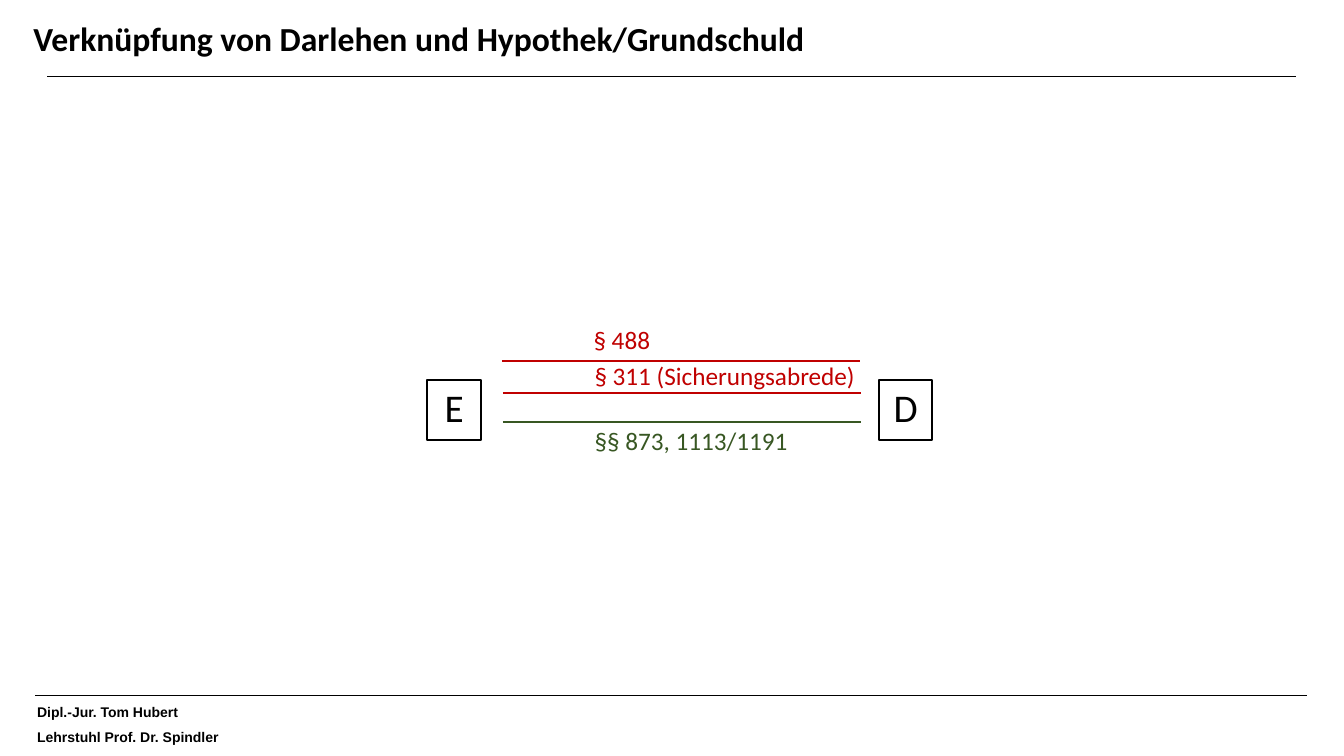
from pptx import Presentation
from pptx.dml.color import RGBColor
from pptx.enum.shapes import MSO_CONNECTOR as CONN, MSO_SHAPE as SHAPE
from pptx.enum.text import MSO_ANCHOR as ANCHOR, MSO_AUTO_SIZE as FIT, PP_ALIGN as ALIGN
from pptx.oxml.ns import qn
from pptx.util import Inches, Pt

COLS, ROWS = 160, 90
BLACK, RED, GREEN = "000000", "C00000", "385723"


def rgb(color):
    return RGBColor.from_string(color)


class SlideBuilder:
    """Places styled elements on a grid of COLS by ROWS cells."""

    font = "Calibri"

    def __init__(self, prs):
        self.slide = prs.slides.add_slide(prs.slide_layouts[5])
        self.col = prs.slide_width / COLS
        self.row = prs.slide_height / ROWS

    def grid(self, x, y, w, h):
        return (round(x * self.col), round(y * self.row),
                round(w * self.col), round(h * self.row))

    def set_text(self, tf, text, size, color=BLACK, bold=False, font=None, align=ALIGN.LEFT):
        tf.text = text
        p = tf.paragraphs[0]
        p.alignment = align
        r = p.runs[0]
        r.font.name = font or self.font
        r.font.size = Pt(size)
        r.font.bold = bold
        r.font.color.rgb = rgb(color)
        return p

    def title(self, text, *cell):
        sp = self.slide.shapes.title
        sp.left, sp.top, sp.width, sp.height = self.grid(*cell)
        tf = sp.text_frame
        tf.auto_size = FIT.NONE
        tf.vertical_anchor = ANCHOR.MIDDLE
        self.set_text(tf, text, 24, bold=True).line_spacing = 0.9

    def label(self, text, *cell, wrap=True, size=18, **style):
        tf = self.slide.shapes.add_textbox(*self.grid(*cell)).text_frame
        tf.word_wrap = wrap
        tf.auto_size = FIT.SHAPE_TO_FIT_TEXT
        self.set_text(tf, text, size, **style)

    def party(self, text, *cell):
        sp = self.slide.shapes.add_shape(SHAPE.RECTANGLE, *self.grid(*cell))
        sp.shadow.inherit = False
        sp.fill.background()
        sp.line.color.rgb = rgb(BLACK)
        sp.line.width = Pt(1.5)
        sp.text_frame.vertical_anchor = ANCHOR.MIDDLE
        p = self.set_text(sp.text_frame, text, 28, align=ALIGN.CENTER)
        p.line_spacing = 0.9
        p.space_before = Pt(10)

    def rule(self, x, y, w, color=BLACK, width=1.5):
        left, top, length, _ = self.grid(x, y, w, 0)
        line = self.slide.shapes.add_connector(CONN.STRAIGHT, left, top, left + length, top)
        line.line.color.rgb = rgb(color)
        line.line.width = Pt(width)
        sppr = line._element.spPr
        sppr.append(sppr.makeelement(qn("a:effectLst"), {}))


def main():
    prs = Presentation()
    prs.slide_width, prs.slide_height = Inches(13.33), Inches(7.5)
    s = SlideBuilder(prs)

    # Title and frame lines
    s.title("Verknüpfung von Darlehen und Hypothek/Grundschuld", 2.76, 1.56, 151.6, 6.48)
    s.rule(5.64, 9.12, 148.7, width=1)
    s.rule(4.2, 82.8, 151.4, width=1)

    # Footer
    for text, y, w in (("Dipl.-Jur. Tom Hubert", 83.16, 19.56),
                       ("Lehrstuhl Prof. Dr. Spindler", 86.16, 24.84)):
        s.label(text, 3.24, y, w, 3.24, wrap=False, size=10, bold=True, font="Arial")

    # Parties
    for name, x in (("E", 50.88), ("D", 104.64)):
        s.party(name, x, 45.24, 6.36, 7.2)

    # Legal relations: text, line left, line row, label row, label width, colour
    for text, x, line_y, label_y, w, color in (
            ("§ 488", 59.76, 42.96, 38.04, 16.2, RED),
            ("§ 311 (Sicherungsabrede)", 59.88, 46.8, 42.36, 33.96, RED),
            ("§§ 873, 1113/1191", 59.88, 50.28, 50.04, 27.36, GREEN)):
        s.rule(x, line_y, 42.6, color)
        s.label(text, x + 9.72, label_y, w, 4.8, color=color)

    prs.save("out.pptx")


if __name__ == "__main__":
    main()
